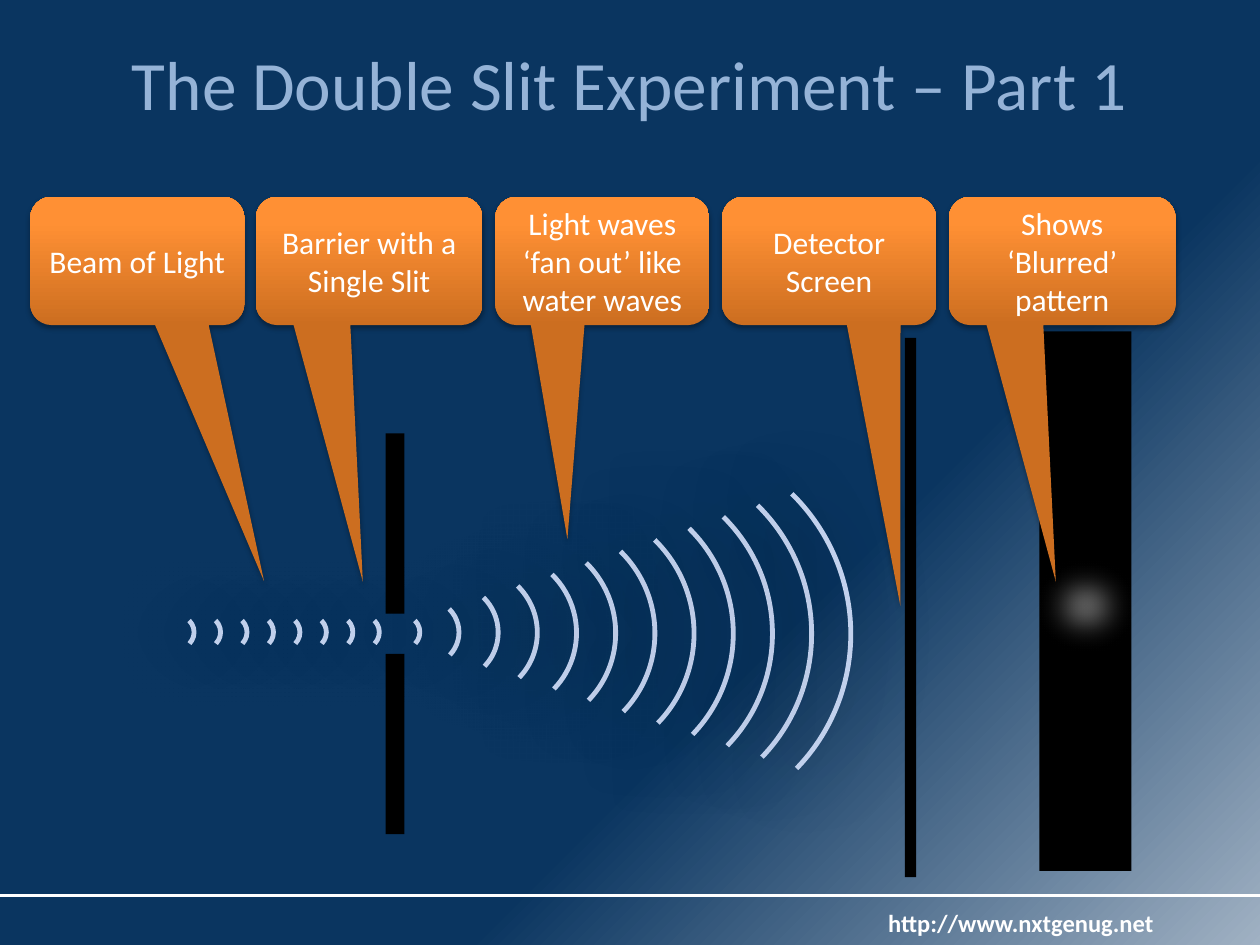
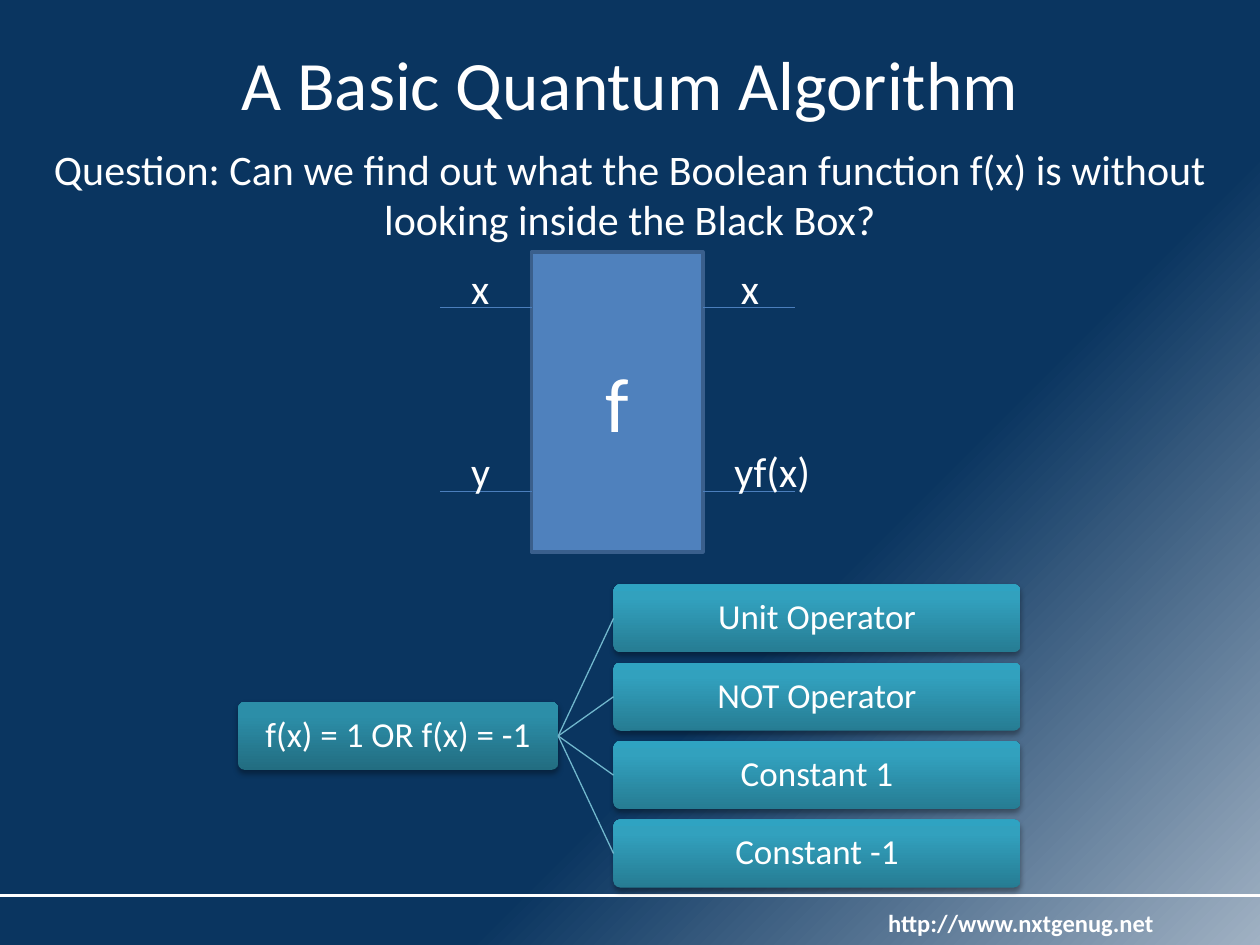
from pptx import Presentation
from pptx.dml.color import RGBColor
from pptx.enum.shapes import MSO_CONNECTOR, MSO_SHAPE
from pptx.enum.text import MSO_ANCHOR as ANCHOR, MSO_AUTO_SIZE as AUTOSIZE, PP_ALIGN as ALIGN
from pptx.oxml import parse_xml
from pptx.oxml.ns import nsdecls, qn
from pptx.util import Pt

COLORS = {
    "white": "FFFFFF", "black": "000000", "navy": "0A3560", "mist": "A0B1C3",
    "pale_title": "95B3D7", "wave": "C2D1ED", "box": "4F81BD",
    "box_edge": "3A5F8C", "wire": "4B7EBC", "branch": "71B7CD",
}
# Gradient stops: position in percent, colour
BACKDROP = [(0, COLORS["mist"]), (36, COLORS["navy"]), (100, COLORS["navy"])]
ORANGE = [(0, "CC6E20"), (80, "FF9034"), (100, "FF9136")]
TEAL_DARK = [(0, "226D81"), (80, "2C8EA8"), (100, "2A90AB")]
TEAL = [(0, "267C93"), (80, "32A1BE"), (100, "2FA3C2")]
UPWARD = '<a:lin ang="16200000" scaled="0"/>'
FROM_CORNER = '<a:path path="circle"><a:fillToRect l="100000" t="100000"/></a:path>'
FONT = "Calibri"


def rgb(name):
    return RGBColor.from_string(COLORS[name])


# Fills and effects
def set_gradient(holder, stops, direction):
    """Swap the empty fill of a properties element for a gradient."""
    stop_xml = "".join(
        f'<a:gs pos="{pos * 1000}"><a:srgbClr val="{color}"/></a:gs>' for pos, color in stops)
    holder.replace(holder.find(qn("a:noFill")), parse_xml(
        f'<a:gradFill {nsdecls("a")} rotWithShape="1"><a:gsLst>{stop_xml}</a:gsLst>'
        f"{direction}</a:gradFill>"))


def add_effect(shape, xml):
    shape.element.spPr.find(qn("a:effectLst")).append(parse_xml(xml))


def add_shadow(shape, blur, distance, alpha):
    add_effect(shape, (
        f'<a:outerShdw {nsdecls("a")} blurRad="{Pt(blur)}" dist="{Pt(distance)}" dir="5400000" '
        f'algn="ctr" rotWithShape="0"><a:srgbClr val="{COLORS["black"]}">'
        f'<a:alpha val="{alpha * 1000}"/></a:srgbClr></a:outerShdw>'))


# Text
def write(frame, text, size, color="white", align=ALIGN.CENTER, bold=None):
    frame.text = text
    paragraph = frame.paragraphs[0]
    paragraph.alignment = align
    font = paragraph.font
    font.name, font.size, font.bold = FONT, Pt(size), bold
    font.color.rgb = rgb(color)
    return paragraph


def add_title(slide, text, color="white"):
    title = slide.shapes.title
    title.left, title.top, title.width, title.height = Pt(36), Pt(21.6), Pt(648), Pt(51.8)
    frame = title.text_frame
    write(frame, text, 39.6, color)
    frame.auto_size = AUTOSIZE.NONE
    frame.vertical_anchor = ANCHOR.MIDDLE


def add_text(slide, text, left, top, width, height, size=24, wrap=False,
             align=ALIGN.LEFT, bold=None):
    label = slide.shapes.add_textbox(Pt(left), Pt(top), Pt(width), Pt(height))
    frame = label.text_frame
    frame.word_wrap = wrap
    frame.auto_size = AUTOSIZE.SHAPE_TO_FIT_TEXT
    write(frame, text, size, align=align, bold=bold)
    return label


# Shapes and lines
def add_block(slide, kind, left, top, width, height, fill=None):
    block = slide.shapes.add_shape(kind, Pt(left), Pt(top), Pt(width), Pt(height))
    block.shadow.inherit = False
    block.line.fill.background()
    if fill:
        block.fill.solid()
        block.fill.fore_color.rgb = rgb(fill)
    else:
        block.fill.background()
    return block


def add_glossy(slide, kind, left, top, width, height, stops, text, size):
    glossy = add_block(slide, kind, left, top, width, height)
    set_gradient(glossy.element.spPr, stops, UPWARD)
    add_shadow(glossy, 3.1, 1.8, 35)
    glossy.text_frame.word_wrap = True
    glossy.text_frame.vertical_anchor = ANCHOR.MIDDLE
    write(glossy.text_frame, text, size)
    return glossy


def add_callout(slide, text, left, width, tip_x, tip_y):
    callout = add_glossy(slide, MSO_SHAPE.ROUNDED_RECTANGULAR_CALLOUT,
                         left, 112.4, width, 73.4, ORANGE, text, 18)
    for index, value in enumerate((tip_x, tip_y, 0.167)):
        callout.adjustments[index] = value


def add_wave(slide, left, width, height):
    """A quarter arc facing right, centred on the beam."""
    beam_y = 361.2
    wave = add_block(slide, MSO_SHAPE.ARC, left, beam_y - height / 2, width, height)
    wave.adjustments[0], wave.adjustments[1] = 53.71, 107.44
    wave.rotation = 225
    wave.line.color.rgb = rgb("wave")
    wave.line.width = Pt(2.75)
    add_shadow(wave, 46, 0, 51)


def add_line(slide, x1, y1, x2, y2, color, width=0.75):
    line = slide.shapes.add_connector(
        MSO_CONNECTOR.STRAIGHT, Pt(x1), Pt(y1), Pt(x2), Pt(y2))
    line.line.color.rgb = rgb(color)
    line.line.width = Pt(width)
    line.element.spPr.append(parse_xml(f'<a:effectLst {nsdecls("a")}/>'))
    return line


def add_node(slide, text, left, top, width, stops):
    node = add_glossy(slide, MSO_SHAPE.ROUNDED_RECTANGLE, left, top, width, 38.9,
                      stops, text, 20)
    node.adjustments[0] = 0.1
    frame = node.text_frame
    frame.margin_left = frame.margin_right = frame.margin_top = frame.margin_bottom = Pt(1)
    frame.paragraphs[0].line_spacing = 0.9
    return node


# Shared look: backdrop, footer rule and address live on the master
def dress_master(master, slide):
    master.background.fill.background()
    set_gradient(master.element.cSld.find(".//" + qn("p:bgPr")), BACKDROP, FROM_CORNER)
    rule = add_line(slide, 0, 511.9, 720, 511.9, "white", 1.5)
    address = add_text(slide, "http://www.nxtgenug.net", 500.4, 515.5, 167, 24.5,
                       size=14, bold=True)
    for part in (rule, address):
        master.element.cSld.spTree.append(part.element)


def fill_double_slit(slide):
    add_title(slide, "The Double Slit Experiment – Part 1", "pale_title")

    # Blurred pattern
    add_block(slide, MSO_SHAPE.RECTANGLE, 594, 189.4, 52.6, 308.2, "black")
    glow = add_block(slide, MSO_SHAPE.RECTANGLE, 576.7, 307.4, 87.8, 77.8, "white")
    add_effect(glow, f'<a:softEdge {nsdecls("a")} rad="{Pt(25)}"/>')

    # Beam
    for step in range(8):
        add_wave(slide, 92.2 + 15.12 * step, 18.7, 18.7)
    add_callout(slide, "Beam of Light", 17.3, 122.4, 0.592, 2.495)

    # Barrier, one half on each side of the slit
    for top in (247.7, 373.7):
        add_block(slide, MSO_SHAPE.RECTANGLE, 220.3, top, 10.8, 103, "black")
    add_callout(slide, "Barrier with a Single Slit", 146.2, 129.6, -0.028, 2.497)

    # Waves that widen behind the slit
    for step in range(12):
        add_wave(slide, 221.2 + 3.78 * step, 18.7 + 18.66 * step, 18.7 + 18.46 * step)
    add_callout(slide, "Light waves ‘fan out’ like water waves", 283, 122.4, -0.163, 2.168)

    # Detector
    add_block(slide, MSO_SHAPE.RECTANGLE, 517, 193, 6.5, 308.2, "black")
    add_callout(slide, "Detector Screen", 412.6, 122.4, 0.333, 2.688)
    add_callout(slide, "Shows ‘Blurred’ pattern", 542.2, 129.6, -0.028, 2.497)


def fill_algorithm(slide):
    add_title(slide, "A Basic Quantum Algorithm")

    # Black box with its wires
    black_box = add_block(slide, MSO_SHAPE.RECTANGLE, 303.8, 144, 97.9, 171.4, "box")
    black_box.line.color.rgb = rgb("box_edge")
    black_box.line.width = Pt(2)
    black_box.text_frame.vertical_anchor = ANCHOR.MIDDLE
    write(black_box.text_frame, "f", 44)
    for y in (175.7, 280.8):
        for start in (251.3, 401.7):
            add_line(slide, start, y, start + 52.5, y, "wire")
    for text, left, top, width in (("x", 262.1, 146.2, 25.2), ("x", 416.2, 146.2, 25.2),
                                   ("y", 262.1, 251.3, 25.2), ("yf(x)", 412.6, 251.3, 58.3)):
        add_text(slide, text, left, top, width, 36)

    # Tree of possible functions
    root = add_node(slide, "f(x) = 1 OR f(x) = -1", 136.1, 401.1, 182.9, TEAL_DARK)
    operators = ("Unit Operator", "NOT Operator", "Constant 1", "Constant -1")
    for row, text in enumerate(operators):
        operator = add_node(slide, text, 350.6, 333.9 + 44.8 * row, 232.6, TEAL)
        branch = add_line(slide, 0, 0, 1, 1, "branch")
        branch.begin_connect(root, 3)
        branch.end_connect(operator, 1)

    add_text(slide, "Question: Can we find out what the Boolean function f(x) is without "
             "looking inside the Black Box?", 0, 78.5, 720, 65.5, wrap=True, align=ALIGN.CENTER)


def main():
    deck = Presentation()
    deck.slide_width, deck.slide_height = Pt(720), Pt(540)
    title_only = deck.slide_layouts[5]
    double_slit = deck.slides.add_slide(title_only)
    algorithm = deck.slides.add_slide(title_only)
    dress_master(deck.slide_master, double_slit)
    fill_double_slit(double_slit)
    fill_algorithm(algorithm)
    deck.save("out.pptx")


if __name__ == "__main__":
    main()
